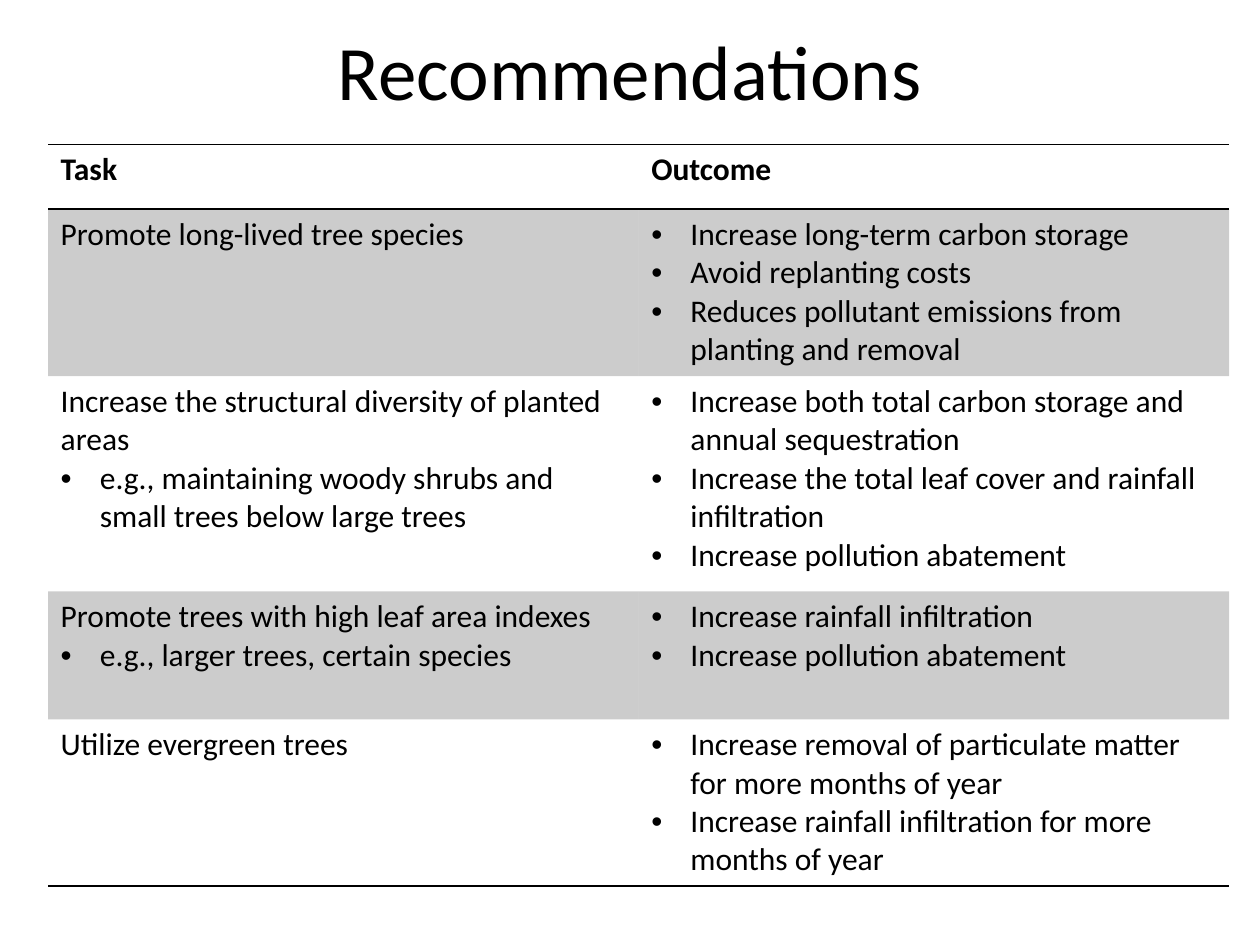
import pptx
import pptx.util
import pptx.dml.color
import pptx.enum.text
import pptx.oxml
import pptx.oxml.ns
import lxml.etree

Cm = pptx.util.Cm
Pt = pptx.util.Pt
qn = pptx.oxml.ns.qn

BLACK = pptx.dml.color.RGBColor(0, 0, 0)
FONT = {"name": "Calibri", "size": Pt(18), "bold": False}
HEAD = {**FONT, "bold": True}
TITLE = {**FONT, "size": Pt(44)}
PLAIN = "{2D5ABB26-0587-4C30-8999-92F81FD0307C}"
INDENT = Cm(0.79)
SHADE = 20

ROWS = [
    (1.3, ["Task"], ["Outcome"]),
    (3.37, ["Promote long-lived tree species"],
     ["• Increase long-term carbon storage",
      "• Avoid replanting costs",
      "• Reduces pollutant emissions from planting and removal"]),
    (4.34, ["Increase the structural diversity of planted areas",
            "•• e.g., maintaining woody shrubs and small trees below large trees"],
     ["•• Increase both total carbon storage and annual sequestration",
      "•• Increase the total leaf cover and rainfall infiltration",
      "•• Increase pollution abatement"]),
    (2.58, ["Promote trees with high leaf area indexes",
            "• e.g., larger trees, certain species"],
     ["• Increase rainfall infiltration", "• Increase pollution abatement"]),
    (3.36, ["Utilize evergreen trees"],
     ["• Increase removal of particulate matter for more months of year",
      "• Increase rainfall infiltration for more months of year"]),
]


def style(font, form):
    for key, val in form.items():
        setattr(font, key, val)
    font.color.rgb = BLACK


def put_box(shape, box):
    for key, val in zip(("left", "top", "width", "height"), box):
        setattr(shape, key, val)


def add_bullet(para):
    props = para._p.get_or_add_pPr()
    props.set("marL", str(INDENT))
    props.set("indent", str(-INDENT))
    lxml.etree.SubElement(props, qn("a:buFont")).set("typeface", "Arial")
    lxml.etree.SubElement(props, qn("a:buChar")).set("char", "•")


def add_rule(cell, side):
    line = lxml.etree.SubElement(cell._tc.get_or_add_tcPr(), qn("a:" + side))
    line.set("w", str(Pt(1)))
    fill = lxml.etree.SubElement(line, qn("a:solidFill"))
    lxml.etree.SubElement(fill, qn("a:srgbClr")).set("val", str(BLACK))


def fill_cell(cell, shaded):
    if not shaded:
        cell.fill.background()
        return
    cell.fill.solid()
    cell.fill.fore_color.rgb = BLACK
    tint = cell._tc.tcPr.find(".//" + qn("a:solidFill") + "/" + qn("a:srgbClr"))
    lxml.etree.SubElement(tint, qn("a:alpha")).set("val", str(SHADE * 1000))


def write_cell(cell, items, form):
    frame = cell.text_frame
    for num, item in enumerate(items):
        para = frame.add_paragraph() if num else frame.paragraphs[0]
        text = item.lstrip("•")
        depth = len(item) - len(text)
        if depth:
            para.level = depth - 1
            add_bullet(para)
        run = para.add_run()
        run.text = text.strip()
        style(run.font, form)


def add_title(slide, box):
    title = slide.shapes.title
    put_box(title, box)
    frame = title.text_frame
    frame.text = "Recommendations"
    frame.vertical_anchor = pptx.enum.text.MSO_ANCHOR.MIDDLE
    para = frame.paragraphs[0]
    para.alignment = pptx.enum.text.PP_ALIGN.CENTER
    style(para.runs[0].font, TITLE)


def add_tasks(slide, left, top, width):
    high = Cm(sum(row[0] for row in ROWS))
    table = slide.shapes.add_table(len(ROWS), 2, left, top, width, high).table
    table.horz_banding = False
    table._tbl.tblPr.find(qn("a:tableStyleId")).text = PLAIN
    last = len(ROWS) - 1
    for num, (tall, *cols) in enumerate(ROWS):
        table.rows[num].height = Cm(tall)
        for col, items in enumerate(cols):
            cell = table.cell(num, col)
            write_cell(cell, items, FONT if num else HEAD)
            if num == 0:
                add_rule(cell, "lnT")
            if num in (0, last):
                add_rule(cell, "lnB")
            fill_cell(cell, num % 2 == 1)


def main():
    deck = pptx.Presentation()
    deck.slide_width, deck.slide_height = Cm(25.4), Cm(19.05)
    slide = deck.slides.add_slide(deck.slide_layouts[5])
    add_title(slide, (Cm(1.27), Cm(0.33), Cm(22.86), Cm(2.16)))
    add_tasks(slide, Cm(0.97), Cm(2.91), Cm(23.81))
    deck.save("out.pptx")


if __name__ == "__main__":
    main()
